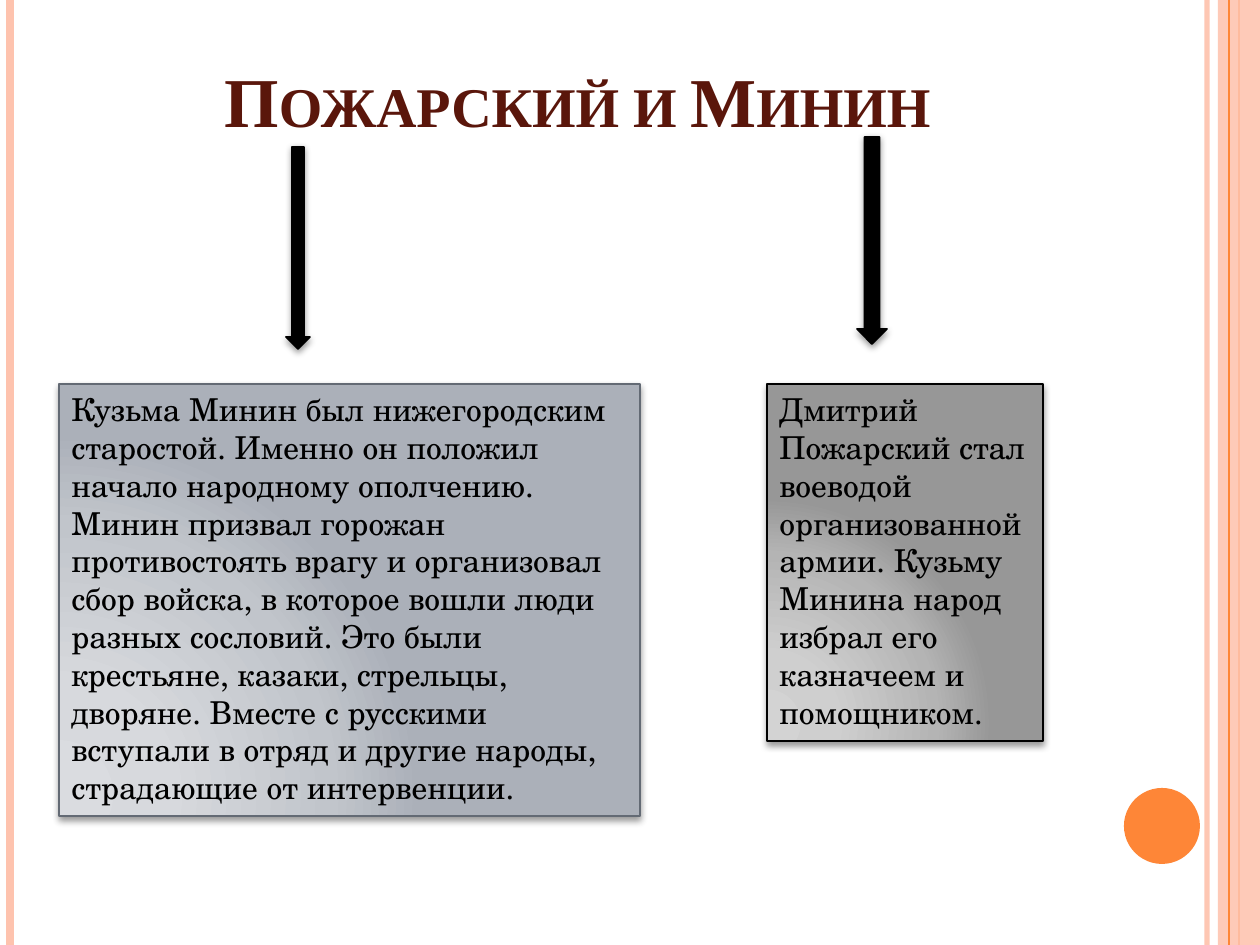
from lxml import etree
from pptx import Presentation
from pptx import util as u
from pptx.dml.color import RGBColor
from pptx.enum import shapes, text
from pptx.oxml.ns import qn

BLACK = RGBColor(0, 0, 0)
PEACH = RGBColor(0xFE, 0xC3, 0xAE)
ORANGE = RGBColor(0xFE, 0x86, 0x37)
MAROON = RGBColor(0x5A, 0x16, 0x0B)
SLATE = RGBColor(0x63, 0x6A, 0x74)
BLUE_GREYS = [RGBColor(0xDA, 0xDC, 0xE0), RGBColor(0xD7, 0xD9, 0xDD),
              RGBColor(0xC1, 0xC5, 0xCB), RGBColor(0xAB, 0xB0, 0xB9)]
GREYS = [RGBColor(v, v, v) for v in (0xD3, 0xCF, 0xB4, 0x97)]
STOPS = (0, 30, 75, 100)

MININ = ("Кузьма Минин был нижегородским старостой. Именно он положил начало "
         "народному ополчению. Минин призвал горожан противостоять врагу и "
         "организовал сбор войска, в которое вошли люди разных сословий. Это были "
         "крестьяне, казаки, стрельцы, дворяне. Вместе с русскими вступали в отряд "
         "и другие народы, страдающие от интервенции.")
POZHARSKY = ("Дмитрий Пожарский стал воеводой организованной армии. Кузьму Минина "
             "народ избрал его казначеем и помощником.")


def px(n):
    return u.Emu(round(n * 914400 / 126))


def add(parent, tag, **attrs):
    return etree.SubElement(parent, qn(tag), {k: str(v) for k, v in attrs.items()})


class Deck:
    title_font = "Times New Roman"
    body_font = "TeX Gyre Schola"

    def __init__(self, width, height):
        self.prs = Presentation()
        self.prs.slide_width, self.prs.slide_height = px(width), px(height)
        self.height = height
        self.s = self.prs.slides.add_slide(self.prs.slide_layouts[5])

    def format_runs(self, tf, font, size, color):
        for p in tf.paragraphs:
            for r in p.runs:
                r.font.name, r.font.size = font, u.Pt(size)
                r.font.color.rgb = color

    def set_opacity(self, parent, percent):
        if percent < 100:
            add(next(parent.iter(qn("a:srgbClr"))), "a:alpha", val=percent * 1000)

    def title(self, words, x, y, w, h):
        sp = self.s.shapes.title
        sp.left, sp.top, sp.width, sp.height = map(px, (x, y, w, h))
        tf = sp.text_frame
        tf.text = words
        tf.vertical_anchor = text.MSO_ANCHOR.BOTTOM
        p = tf.paragraphs[0]
        p.alignment = text.PP_ALIGN.CENTER
        self.format_runs(tf, self.title_font, 40, MAROON)
        r = p.runs[0]
        r.font.bold = True
        r.font._element.set("cap", "small")

    def stripe(self, x, color, weight, opacity=100):
        line = self.s.shapes.add_connector(
            shapes.MSO_CONNECTOR.STRAIGHT, px(x), 0, px(x), px(self.height))
        line.line.color.rgb = color
        line.line.width = u.Pt(weight)
        spPr = line._element.spPr
        self.set_opacity(spPr, opacity)
        add(spPr, "a:effectLst")

    def shape(self, kind, x, y, w, h, fill=None, line=None, opacity=100):
        sp = self.s.shapes.add_shape(kind, *map(px, (x, y, w, h)))
        sp.shadow.inherit = False
        if fill is None:
            sp.fill.background()
        else:
            sp.fill.solid()
            sp.fill.fore_color.rgb = fill
            self.set_opacity(sp._element.spPr, opacity)
        if line is None:
            sp.line.fill.background()
        else:
            sp.line.color.rgb = line
            sp.line.width = u.Pt(1)
        return sp

    def shadow(self, sp, opacity, distance):
        effects = sp._element.spPr.find(qn("a:effectLst"))
        outer = add(effects, "a:outerShdw", blurRad=u.Pt(4), dist=u.Pt(distance),
                    dir=5400000, rotWithShape=0)
        add(add(outer, "a:srgbClr", val=BLACK), "a:alpha", val=opacity * 1000)

    def gradient(self, sp, colors):
        spPr = sp._element.spPr
        grad = etree.Element(qn("a:gradFill"), rotWithShape="1")
        stops = add(grad, "a:gsLst")
        for stop, color in zip(STOPS, colors):
            add(add(stops, "a:gs", pos=stop * 1000), "a:srgbClr", val=color)
        add(add(grad, "a:path", path="circle"), "a:fillToRect",
            l=5000, t=100000, r=120000, b=10000)
        spPr.replace(spPr.find(qn("a:noFill")), grad)

    def arrow(self, x, y, w, h):
        sp = self.shape(shapes.MSO_SHAPE.DOWN_ARROW, x, y, w, h, BLACK, BLACK)
        self.shadow(sp, 42, 1.6)

    def card(self, words, x, y, w, h, colors, line):
        sp = self.shape(shapes.MSO_SHAPE.RECTANGLE, x, y, w, h, line=line)
        self.gradient(sp, colors)
        self.shadow(sp, 40, 2)
        tf = sp.text_frame
        tf.text = words
        tf.word_wrap = True
        tf.auto_size = text.MSO_AUTO_SIZE.SHAPE_TO_FIT_TEXT
        tf.vertical_anchor = text.MSO_ANCHOR.TOP
        tf.paragraphs[0].alignment = text.PP_ALIGN.LEFT
        self.format_runs(tf, self.body_font, 18, BLACK)


def main():
    deck = Deck(1260, 945)
    deck.stripe(1207, PEACH, 3, 93)
    deck.stripe(10, PEACH, 4.5)
    deck.stripe(1239, ORANGE, 1.5)
    deck.shape(shapes.MSO_SHAPE.RECTANGLE, 1218, 0, 42, 945, PEACH, opacity=87)
    deck.stripe(1229, ORANGE, 0.75)
    deck.shape(shapes.MSO_SHAPE.OVAL, 1124, 788, 76, 76, ORANGE)

    deck.title("Пожарский и Минин", 63, 38, 1029, 110)
    deck.arrow(286, 147, 24, 202)
    deck.arrow(857, 137, 30, 207)
    deck.card(MININ, 59, 384, 581, 432, BLUE_GREYS, SLATE)
    deck.card(POZHARSKY, 767, 384, 276, 357, GREYS, BLACK)
    deck.prs.save("out.pptx")


if __name__ == "__main__":
    main()
